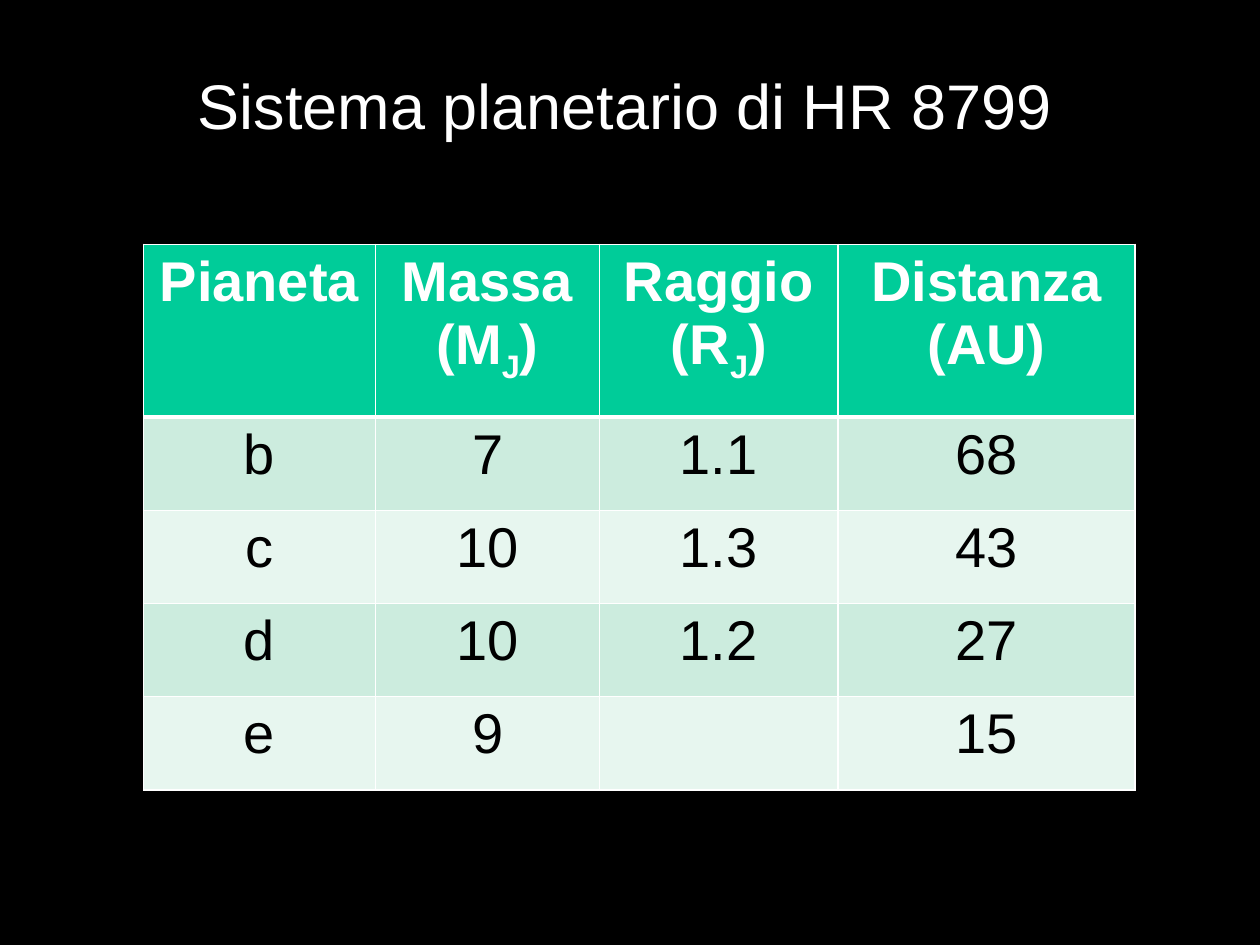
from dataclasses import dataclass

from lxml import etree
from pptx import Presentation
from pptx.dml.color import RGBColor
from pptx.enum.text import MSO_ANCHOR, MSO_AUTO_SIZE, PP_ALIGN
from pptx.oxml.ns import qn
from pptx.util import Inches, Pt

CENTER = PP_ALIGN.CENTER
TOP = MSO_ANCHOR.TOP
GROW = MSO_AUTO_SIZE.SHAPE_TO_FIT_TEXT

BLACK = RGBColor(0x00, 0x00, 0x00)
WHITE = RGBColor(0xFF, 0xFF, 0xFF)
GREEN = RGBColor(0x00, 0xCC, 0x99)
MINT = RGBColor(0xCC, 0xEC, 0xDE)
PALE_MINT = RGBColor(0xE7, 0xF6, 0xEF)

FONT = "Arial"
SLIDE_WIDTH, SLIDE_HEIGHT = Inches(10), Inches(7.5)
COLUMN_SHARES = (0.184, 0.178, 0.189, 0.236)
HEADER_HEIGHT, ROW_HEIGHT = Inches(1.37), Inches(0.74)
THIN, THICK = Pt(1), Pt(3)


@dataclass(frozen=True)
class Piece:
    text: str
    subscript: bool = False


@dataclass(frozen=True)
class Style:
    size: int
    color: RGBColor
    bold: bool = False


@dataclass(frozen=True)
class Planet:
    name: str
    mass: str
    radius: str
    distance: str


TITLE_STYLE = Style(36, WHITE)
HEADER_STYLE = Style(32, WHITE, True)
BODY_STYLE = Style(32, BLACK)

JUPITER = Piece("J", True)
HEADERS = (
    ((Piece("Pianeta"),),),
    ((Piece("Massa (M"), JUPITER, Piece(")")),),
    ((Piece("Raggio"),), (Piece("(R"), JUPITER, Piece(")"))),
    ((Piece("Distanza (AU)"),),),
)
PLANETS = (
    Planet("b", "7", "1.1", "68"),
    Planet("c", "10", "1.3", "43"),
    Planet("d", "10", "1.2", "27"),
    Planet("e", "9", "", "15"),
)


def write(frame, lines: tuple, style: Style) -> None:
    for index, pieces in enumerate(lines):
        paragraph = frame.add_paragraph() if index else frame.paragraphs[0]
        paragraph.alignment = CENTER
        for piece in pieces:
            run = paragraph.add_run()
            run.text = piece.text
            run.font.name = FONT
            run.font.size = Pt(style.size)
            run.font.bold = style.bold
            run.font.color.rgb = style.color
            if piece.subscript:
                run._r.get_or_add_rPr().set("baseline", "-25000")


def draw_borders(cell, top: int, bottom: int) -> None:
    properties = cell._tc.get_or_add_tcPr()
    for side, width in (("L", THIN), ("R", THIN), ("T", top), ("B", bottom)):
        line = etree.SubElement(properties, qn(f"a:ln{side}"), w=str(width))
        solid = etree.SubElement(line, qn("a:solidFill"))
        etree.SubElement(solid, qn("a:srgbClr"), val=str(WHITE))


def fill_cell(cell, lines: tuple, style: Style, color: RGBColor,
              top: int = THIN, bottom: int = THIN) -> None:
    draw_borders(cell, top, bottom)
    cell.fill.solid()
    cell.fill.fore_color.rgb = color
    write(cell.text_frame, lines, style)


def add_title(slide) -> None:
    title = slide.shapes.title
    title.left, title.top = int(SLIDE_WIDTH * 0.051), int(SLIDE_HEIGHT * 0.07)
    title.width, title.height = int(SLIDE_WIDTH * 0.89), Inches(0.61)
    frame = title.text_frame
    frame.margin_left = frame.margin_right = 0
    frame.margin_top = frame.margin_bottom = 0
    frame.vertical_anchor = TOP
    frame.word_wrap = True
    frame.auto_size = GROW
    write(frame, ((Piece("Sistema planetario di HR 8799"),),), TITLE_STYLE)


def add_planet_table(slide) -> None:
    widths = [int(SLIDE_WIDTH * share) for share in COLUMN_SHARES]
    table = slide.shapes.add_table(
        len(PLANETS) + 1, len(widths), Inches(1.14), Inches(1.94),
        sum(widths), HEADER_HEIGHT + ROW_HEIGHT * len(PLANETS),
    ).table
    for column, width in zip(table.columns, widths):
        column.width = width
    for index, row in enumerate(table.rows):
        row.height = ROW_HEIGHT if index else HEADER_HEIGHT

    for column, lines in enumerate(HEADERS):
        fill_cell(table.cell(0, column), lines, HEADER_STYLE, GREEN, bottom=THICK)
    for row, planet in enumerate(PLANETS, start=1):
        color = MINT if row % 2 else PALE_MINT
        top = THICK if row == 1 else THIN
        values = (planet.name, planet.mass, planet.radius, planet.distance)
        for column, value in enumerate(values):
            lines = ((Piece(value),),) if value else ()
            fill_cell(table.cell(row, column), lines, BODY_STYLE, color, top=top)


def main() -> None:
    presentation = Presentation()
    presentation.slide_width = SLIDE_WIDTH
    presentation.slide_height = SLIDE_HEIGHT
    slide = presentation.slides.add_slide(
        presentation.slide_layouts.get_by_name("Title Only"))
    slide.background.fill.solid()
    slide.background.fill.fore_color.rgb = BLACK
    add_title(slide)
    add_planet_table(slide)
    presentation.save("out.pptx")


if __name__ == "__main__":
    main()
